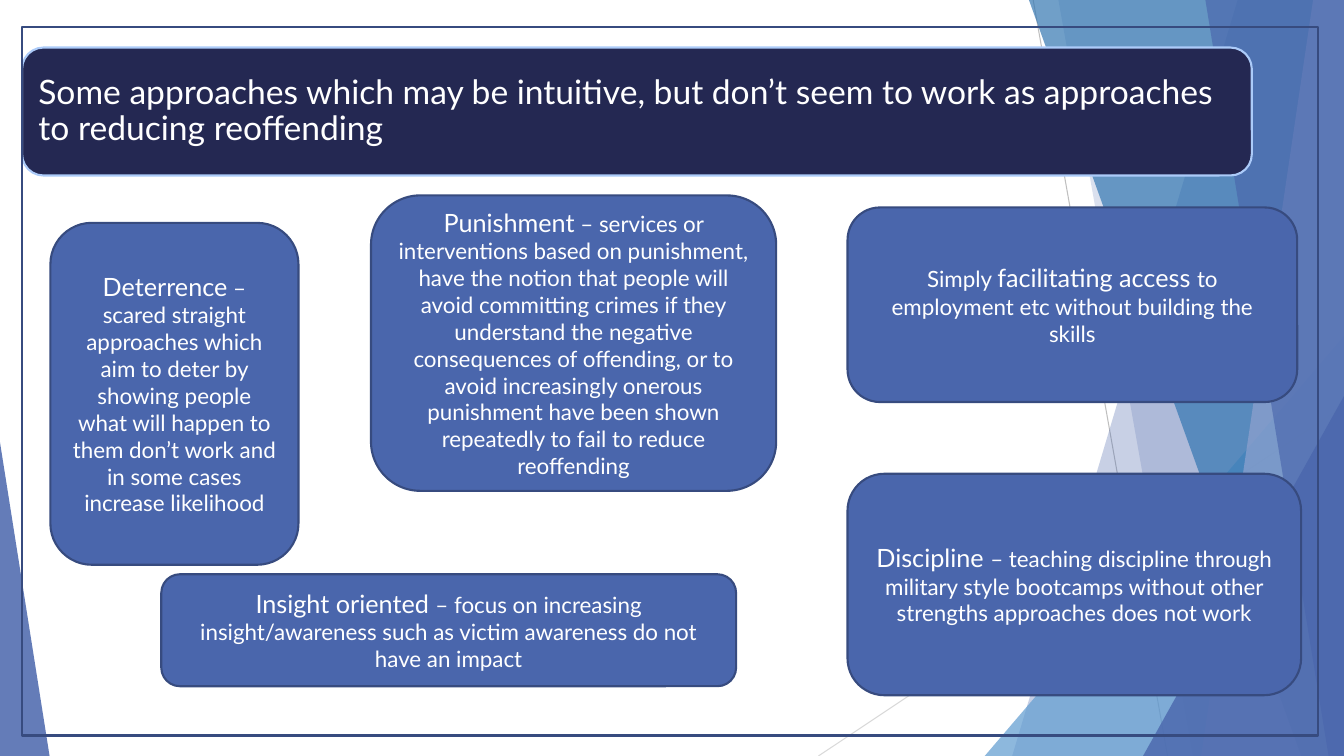
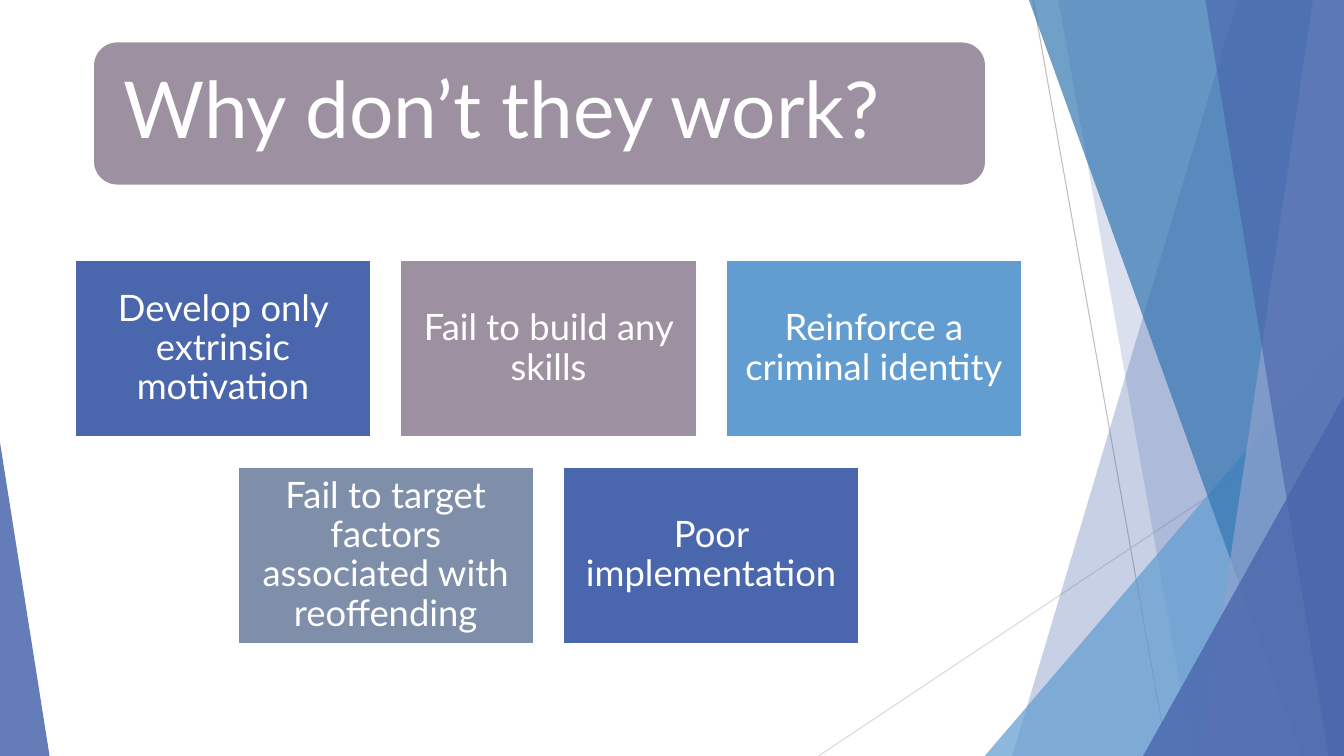
"""Build two slides on approaches that fail to reduce reoffending."""
from dataclasses import dataclass

from lxml import etree
from pptx import Presentation
from pptx.dml.color import RGBColor
from pptx.enum.shapes import MSO_CONNECTOR, MSO_SHAPE
from pptx.enum.text import MSO_ANCHOR, MSO_AUTO_SIZE, PP_ALIGN
from pptx.oxml.ns import qn
from pptx.util import Pt

RECT = MSO_SHAPE.RECTANGLE
ROUND = MSO_SHAPE.ROUNDED_RECTANGLE
WEDGE = MSO_SHAPE.RIGHT_TRIANGLE
PEAK = MSO_SHAPE.ISOSCELES_TRIANGLE
LINE = MSO_CONNECTOR.STRAIGHT
MIDDLE = MSO_ANCHOR.MIDDLE
FIXED = MSO_AUTO_SIZE.NONE
LEFT, CENTER = PP_ALIGN.LEFT, PP_ALIGN.CENTER

FONT = "Lato"
WIDE, HIGH = 960, 540
HEX = {
    "white": "FFFFFF", "navy": "242852", "pale": "ACCBF9", "blue": "4A66AC",
    "edge": "374B7F", "mauve": "9D90A0", "sky": "629DD1", "slate": "7F8FA9",
    "deep": "3477B2", "mist": "90A2CF", "gray": "BFBFBF", "light": "D9D9D9",
}


@dataclass(frozen=True)
class Box:
    x: float
    y: float
    w: float
    h: float


@dataclass(frozen=True)
class Shard:
    top: float
    foot: float
    tone: str
    alpha: int


@dataclass(frozen=True)
class Spike:
    box: Box
    tip: float
    tone: str
    alpha: int


@dataclass(frozen=True)
class Ray:
    start: tuple[float, float]
    end: tuple[float, float]
    tone: str


@dataclass(frozen=True)
class Banner:
    box: Box
    fill: str
    line: str
    text: str
    size: float
    inset: float
    pad: float


@dataclass(frozen=True)
class Note:
    box: Box
    runs: tuple[tuple[str, float], ...]


@dataclass(frozen=True)
class Card:
    text: str
    tone: str


RAYS = (
    Ray((738, 0), (834, HIGH), "gray"),
    Ray((WIDE, 290), (584.6, HIGH), "light"),
)
DECOR = (
    Shard(884, 723, "blue", 30),
    Shard(756, 852, "blue", 20),
    Spike(Box(703.4, 240, 256.6, 300), 1, "sky", 72),
    Shard(735, 929.5, "deep", 70),
    Shard(938, 858, "mist", 70),
    Shard(861, 949, "blue", 65),
    Spike(Box(816.5, 283, 143.5, 257), 1, "blue", 80),
    Spike(Box(0, 316, 35.4, 224), 0, "blue", 85),
)
FRAME = Box(15.8, 19.4, 926, 506)
BANNERS = (
    Banner(Box(15.8, 34, 878.4, 91.4), "navy", "pale",
           "Some approaches which may be intuitive, but don’t seem to work "
           "as approaches to reducing reoffending", 24, 4.4, 7.2),
    Banner(Box(66.4, 29.6, 638, 103), "mauve", "white",
           "Why don’t they work?", 56, 5, 16.6),
)
NOTES = (
    Note(Box(265, 139.6, 289.4, 211), (
        ("Punishment", 18),
        (" – services or interventions based on punishment, have the notion "
         "that people will avoid committing crimes if they understand the "
         "negative consequences of offending, or to avoid increasingly onerous "
         "punishment have been shown repeatedly to fail to reduce reoffending", 16))),
    Note(Box(36, 159.2, 177.2, 244.2), (
        ("Deterrence", 18),
        (" – scared straight approaches which aim to deter by showing people "
         "what will happen to them don’t work and in some cases increase "
         "likelihood", 16))),
    Note(Box(605.4, 338.4, 324, 158.2), (
        ("Discipline ", 18),
        ("– teaching discipline through military style bootcamps without other "
         "strengths approaches does not work", 16))),
    Note(Box(115.2, 410.2, 410.6, 80), (
        ("Insight oriented ", 18),
        ("– focus on increasing insight/awareness such as victim awareness do "
         "not have an impact", 16))),
    Note(Box(605.4, 148.2, 321.2, 139), (
        ("Simply ", 16),
        ("facilitating access ", 18),
        ("to employment etc without building the skills", 16))),
)
ROWS = (
    (Card("Develop only extrinsic motivation", "blue"),
     Card("Fail to build any skills", "mauve"),
     Card("Reinforce a criminal identity", "sky")),
    (Card("Fail to target factors associated with reoffending", "slate"),
     Card("Poor implementation", "blue")),
)
CARD_W, CARD_H, GAP = 211.6, 126.8, 20.9
MID, TOP = 391.8, 185.6


def tint(name: str) -> RGBColor:
    return RGBColor.from_string(HEX[name])


def points(box: Box) -> tuple:
    return Pt(box.x), Pt(box.y), Pt(box.w), Pt(box.h)


def fade(shape, alpha: int) -> None:
    for node in shape.element.spPr.iter(qn("a:srgbClr")):
        etree.SubElement(node, qn("a:alpha")).set("val", str(alpha * 1000))


def paint(shape, fill: str | None, line: str | None) -> None:
    shape.shadow.inherit = False
    if fill:
        shape.fill.solid()
        shape.fill.fore_color.rgb = tint(fill)
    else:
        shape.fill.background()
    if line:
        shape.line.color.rgb = tint(line)
        shape.line.width = Pt(1.5)
    else:
        shape.line.fill.background()


def add_box(slide, kind, box: Box, fill: str | None, line: str | None):
    shape = slide.shapes.add_shape(kind, *points(box))
    paint(shape, fill, line)
    return shape


def write(shape, runs, align, pad: float = 7.2, space: float = 1) -> None:
    frame = shape.text_frame
    frame.word_wrap = True
    frame.auto_size = FIXED
    frame.vertical_anchor = MIDDLE
    frame.margin_left = frame.margin_right = Pt(pad)
    frame.margin_top = frame.margin_bottom = Pt(min(pad, 3.6) if space == 1 else pad)
    para = frame.paragraphs[0]
    para.alignment = align
    para.line_spacing = space
    for text, size in runs:
        run = para.add_run()
        run.text = text
        run.font.name = FONT
        run.font.size = Pt(size)
        run.font.color.rgb = tint("white")


def add_ray(slide, ray: Ray):
    ends = (Pt(n) for n in (*ray.start, *ray.end))
    line = slide.shapes.add_connector(LINE, *ends)
    line.line.color.rgb = tint(ray.tone)
    line.line.width = Pt(0.75)
    etree.SubElement(line.element.spPr, qn("a:effectLst"))
    return line


def add_decor(slide, part: Shard | Spike):
    if isinstance(part, Spike):
        shape = add_box(slide, PEAK, part.box, part.tone, None)
        shape.adjustments[0] = part.tip
    else:
        pen = slide.shapes.build_freeform(Pt(part.top), 0)
        spots = ((WIDE, 0), (WIDE, HIGH), (part.foot, HIGH))
        pen.add_line_segments([(Pt(x), Pt(y)) for x, y in spots], close=True)
        shape = pen.convert_to_shape()
        paint(shape, part.tone, None)
    fade(shape, part.alpha)
    return shape


def dress(slide, layout) -> None:
    parts = [add_ray(slide, ray) for ray in RAYS]
    parts += [add_decor(slide, part) for part in DECOR]
    for num, part in enumerate(parts, 100):
        part.element.xpath(".//p:cNvPr")[0].set("id", str(num))
        layout.shapes.element.append(part.element)


def add_banner(slide, banner: Banner) -> None:
    box, inset = banner.box, banner.inset
    add_box(slide, ROUND, box, banner.fill, banner.line)
    title = slide.shapes.title
    title.left, title.top, title.width, title.height = points(
        Box(box.x + inset, box.y + inset, box.w - 2 * inset, box.h - 2 * inset))
    write(title, ((banner.text, banner.size),), LEFT, banner.pad, 0.9)
    slide.shapes.element.append(title.element)


def add_notes(slide) -> None:
    add_box(slide, RECT, FRAME, None, "edge")
    for note in NOTES:
        shape = add_box(slide, ROUND, note.box, "blue", "edge")
        write(shape, note.runs, CENTER)


def add_cards(slide) -> None:
    for row, cards in enumerate(ROWS):
        span = len(cards) * (CARD_W + GAP) - GAP
        for col, card in enumerate(cards):
            box = Box(MID - span / 2 + col * (CARD_W + GAP),
                      TOP + row * (CARD_H + GAP), CARD_W, CARD_H)
            shape = add_box(slide, RECT, box, card.tone, "white")
            write(shape, ((card.text, 26),), CENTER, 7.9, 0.9)


def main() -> None:
    deck = Presentation()
    deck.slide_width, deck.slide_height = Pt(WIDE), Pt(HIGH)
    layout = deck.slide_layouts[5]
    first, second = (deck.slides.add_slide(layout) for _ in BANNERS)
    dress(first, layout)
    for slide, banner in zip((first, second), BANNERS):
        add_banner(slide, banner)
    add_notes(first)
    add_cards(second)
    deck.save("out.pptx")


if __name__ == "__main__":
    main()
